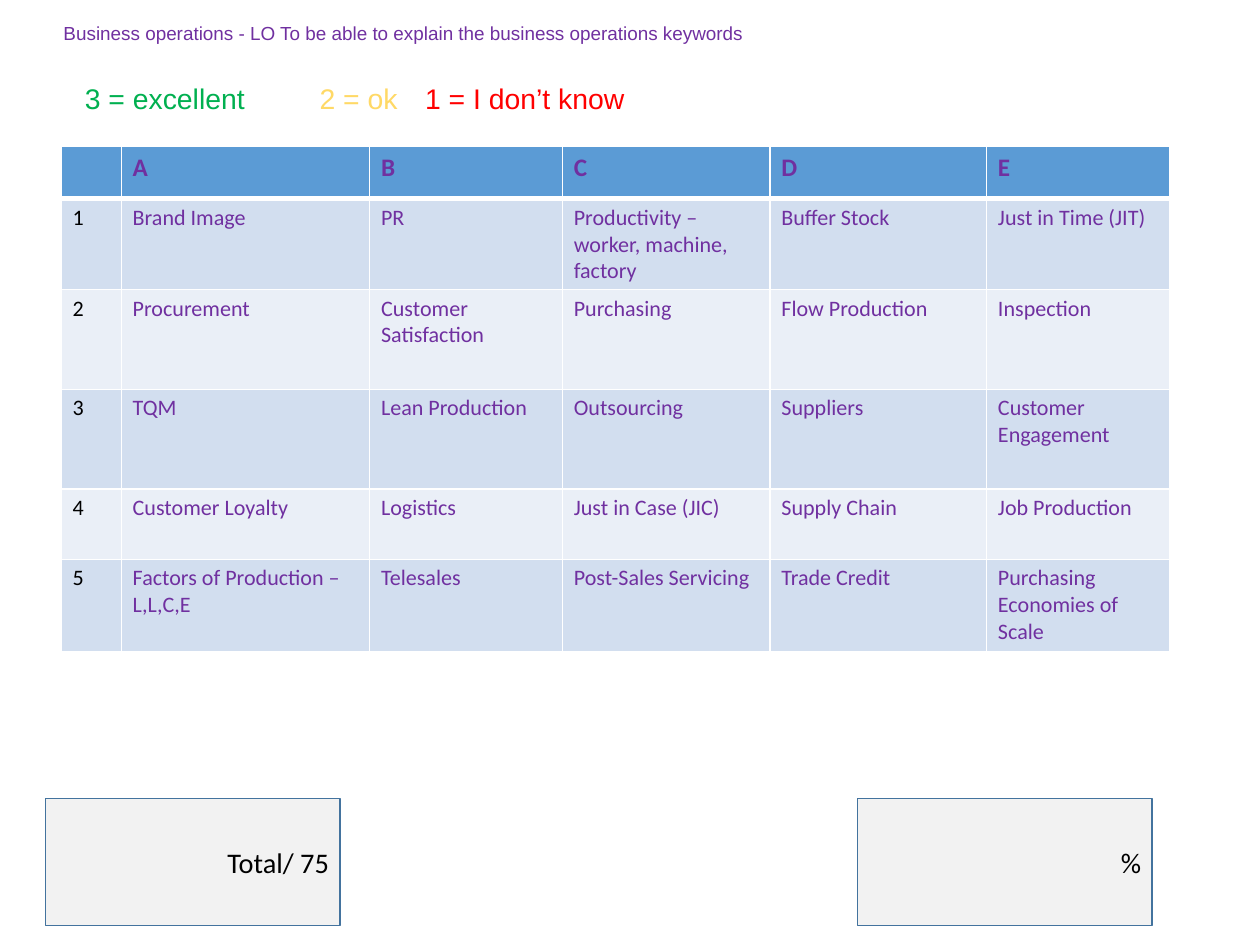
"""Build a business operations keyword self-assessment slide."""
from dataclasses import dataclass

from lxml.etree import SubElement
from pptx import Presentation
from pptx.dml.color import RGBColor
from pptx.enum.shapes import MSO_SHAPE as Shape
from pptx.enum.text import MSO_ANCHOR as Anchor, MSO_AUTO_SIZE as AutoSize, PP_ALIGN as Align
from pptx.oxml.ns import qn
from pptx.slide import Slide
from pptx.table import _Cell as Cell
from pptx.text.text import _Paragraph as Paragraph
from pptx.util import Inches, Pt

PURPLE = RGBColor(0x70, 0x30, 0xA0)
GREEN = RGBColor(0x00, 0xB0, 0x50)
YELLOW = RGBColor(0xFF, 0xD9, 0x66)
RED = RGBColor(0xFF, 0x00, 0x00)
BLACK = RGBColor(0x00, 0x00, 0x00)
WHITE = RGBColor(0xFF, 0xFF, 0xFF)
HEADER_BLUE = RGBColor(0x5B, 0x9B, 0xD5)
BAND_DARK = RGBColor(0xD2, 0xDE, 0xEF)
BAND_LIGHT = RGBColor(0xEA, 0xEF, 0xF7)
BOX_GREY = RGBColor(0xF2, 0xF2, 0xF2)
BOX_LINE = RGBColor(0x43, 0x73, 0x9E)

COLUMN_WIDTHS = (0.53, 2.19, 1.7, 1.83, 1.91, 1.61)
ROW_HEIGHTS = (0.46, 0.68, 0.88, 0.88, 0.62, 0.81)
KEYWORDS = (
    ("", "A", "B", "C", "D", "E"),
    ("1", "Brand Image", "PR", "Productivity – worker, machine, factory",
     "Buffer Stock", "Just in Time (JIT)"),
    ("2", "Procurement", "Customer Satisfaction", "Purchasing",
     "Flow Production", "Inspection"),
    ("3", "TQM", "Lean Production", "Outsourcing", "Suppliers", "Customer Engagement"),
    ("4", "Customer Loyalty", "Logistics", "Just in Case (JIC)",
     "Supply Chain", "Job Production"),
    ("5", "Factors of Production – L,L,C,E", "Telesales", "Post-Sales Servicing",
     "Trade Credit", "Purchasing Economies of Scale"),
)


@dataclass(frozen=True)
class Rating:
    text: str
    color: RGBColor


@dataclass(frozen=True)
class ScoreBox:
    label: str
    left: float


RATINGS = (
    Rating("3 = excellent\t\t ", GREEN),
    Rating("2 = ok \t", YELLOW),
    Rating("1 = I don’t know", RED),
)
SCORE_BOXES = (ScoreBox("Total/ 75", 0.4), ScoreBox("%", 7.56))


def add_run(paragraph: Paragraph, text: str, size: int, color: RGBColor,
            font: str = "Calibri", bold: bool = False) -> None:
    run = paragraph.add_run()
    run.text = text
    run.font.name = font
    run.font.size = Pt(size)
    run.font.bold = bold
    run.font.color.rgb = color


def add_title(slide: Slide) -> None:
    title = slide.shapes.title
    title.left, title.top = Inches(0.46), Inches(0.14)
    title.width, title.height = Inches(8.14), Inches(0.3)
    frame = title.text_frame
    frame.word_wrap = True
    frame.auto_size = AutoSize.SHAPE_TO_FIT_TEXT
    frame.vertical_anchor = Anchor.TOP
    paragraph = frame.paragraphs[0]
    paragraph.alignment = Align.LEFT
    add_run(paragraph, "Business operations - LO To be able to explain "
            "the business operations keywords", 12, PURPLE, "Arial")


def add_border(cell: Cell, side: str, width: int) -> None:
    line = SubElement(cell._tc.get_or_add_tcPr(), qn(f"a:ln{side}"), w=str(Pt(width)))
    fill = SubElement(line, qn("a:solidFill"))
    SubElement(fill, qn("a:srgbClr"), val=str(WHITE))


def format_cell(cell: Cell, text: str, row: int, column: int) -> None:
    is_header = row == 0
    add_border(cell, "L", 1)
    add_border(cell, "R", 1)
    add_border(cell, "T", 3 if row == 1 else 1)
    add_border(cell, "B", 3 if is_header else 1)
    cell.fill.solid()
    band = BAND_DARK if row % 2 else BAND_LIGHT
    cell.fill.fore_color.rgb = HEADER_BLUE if is_header else band
    if text:
        add_run(cell.text_frame.paragraphs[0], text, 16 if is_header else 14,
                PURPLE if column else BLACK, bold=is_header)


def add_keyword_table(slide: Slide) -> None:
    table = slide.shapes.add_table(
        len(ROW_HEIGHTS), len(COLUMN_WIDTHS), Inches(0.54), Inches(1.29),
        Inches(sum(COLUMN_WIDTHS)), Inches(sum(ROW_HEIGHTS))).table
    for column, width in zip(table.columns, COLUMN_WIDTHS):
        column.width = Inches(width)
    for row, height in zip(table.rows, ROW_HEIGHTS):
        row.height = Inches(height)
    for row_index, words in enumerate(KEYWORDS):
        for column_index, word in enumerate(words):
            format_cell(table.cell(row_index, column_index), word, row_index, column_index)


def add_rating_key(slide: Slide) -> None:
    text_box = slide.shapes.add_textbox(Inches(0.65), Inches(0.67), Inches(8.42), Inches(0.4))
    frame = text_box.text_frame
    frame.word_wrap = True
    frame.auto_size = AutoSize.SHAPE_TO_FIT_TEXT
    for rating in RATINGS:
        add_run(frame.paragraphs[0], rating.text, 18, rating.color, "Arial")


def add_score_box(slide: Slide, box: ScoreBox) -> None:
    shape = slide.shapes.add_shape(
        Shape.RECTANGLE, Inches(box.left), Inches(7.04), Inches(2.6), Inches(1.12))
    shape.shadow.inherit = False
    shape.fill.solid()
    shape.fill.fore_color.rgb = BOX_GREY
    shape.line.color.rgb = BOX_LINE
    shape.line.width = Pt(1)
    shape.text_frame.vertical_anchor = Anchor.MIDDLE
    paragraph = shape.text_frame.paragraphs[0]
    paragraph.alignment = Align.RIGHT
    add_run(paragraph, box.label, 18, BLACK)


def main() -> None:
    presentation = Presentation()
    presentation.slide_width, presentation.slide_height = Inches(11.11), Inches(8.33)
    slide = presentation.slides.add_slide(presentation.slide_layouts.get_by_name("Title Only"))
    add_title(slide)
    add_keyword_table(slide)
    add_rating_key(slide)
    for box in SCORE_BOXES:
        add_score_box(slide, box)
    presentation.save("out.pptx")


if __name__ == "__main__":
    main()
